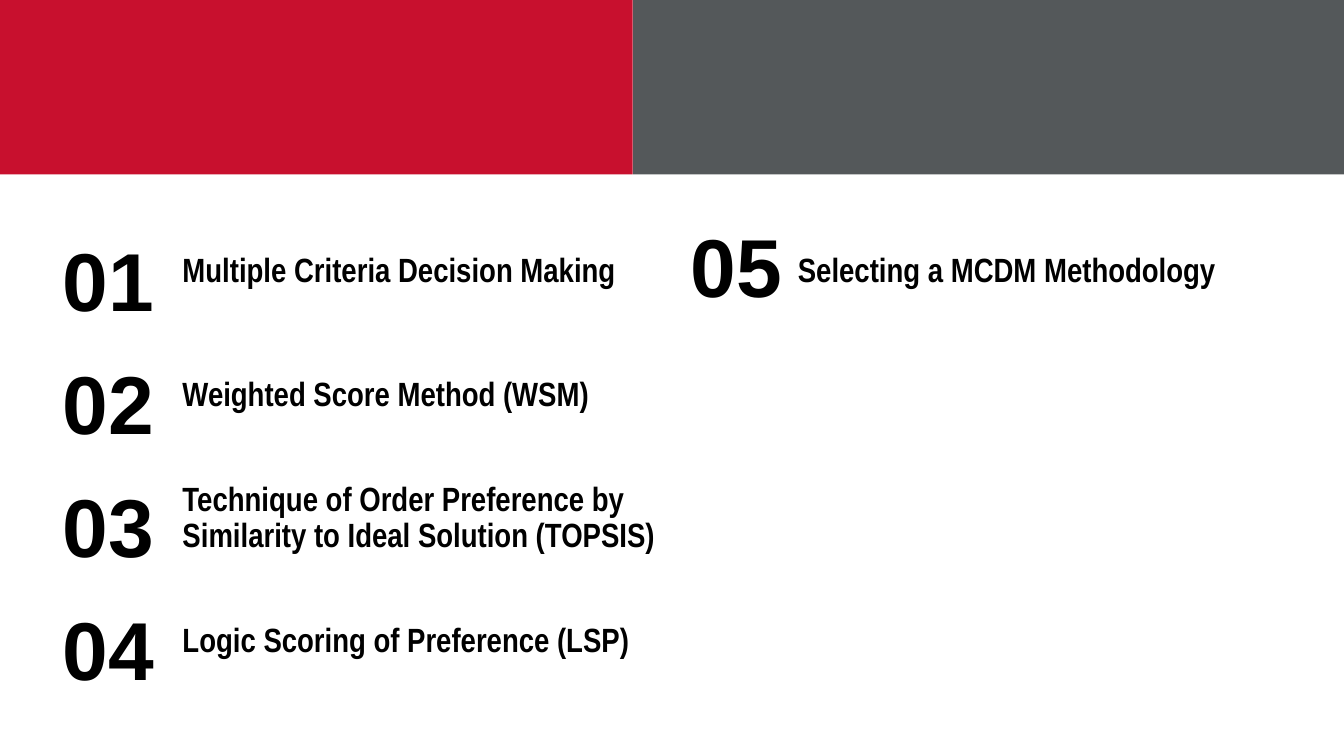
import dataclasses

import pptx
import pptx.dml.color
import pptx.enum.shapes
import pptx.enum.text
import pptx.util

Cm = pptx.util.Cm
Pt = pptx.util.Pt
RGB = pptx.dml.color.RGBColor
ANCHOR = pptx.enum.text.MSO_ANCHOR


@dataclasses.dataclass(frozen=True)
class Theme:
    red: RGB = RGB(0xC8, 0x10, 0x2E)
    grey: RGB = RGB(0x54, 0x58, 0x5A)
    ink: RGB = RGB(0, 0, 0)
    number_font: str = "Arial"
    topic_font: str = "Arial Narrow"
    number_size: Pt = Pt(44)
    topic_size: Pt = Pt(18)
    topic_leading: Pt = Pt(19)


THEME = Theme()
SLIDE_WIDTH, SLIDE_HEIGHT = Cm(25.4), Cm(14.29)
ROW_PITCH = Cm(2.33)
TOPIC_WIDTH, TOPIC_HEIGHT = Cm(9.6), Cm(1.6)
NUMBER_WIDTH, NUMBER_HEIGHT = Cm(3.1), Cm(2.13)

LEFT_TOPICS = [
    "Multiple Criteria Decision Making",
    "Weighted Score Method (WSM)",
    "Technique of Order Preference by Similarity to Ideal Solution (TOPSIS)",
    "Logic Scoring of Preference (LSP)",
]
RIGHT_TOPICS = ["Selecting a MCDM Methodology"]


def apply(target, formats):
    for attribute, value in formats.items():
        setattr(target, attribute, value)


def add_text(slide, box, text, frame_formats, paragraph_formats, font_formats):
    frame = slide.shapes.add_textbox(*box).text_frame
    apply(frame, {"word_wrap": True, **frame_formats})
    line = frame.paragraphs[0]
    line.text = text
    apply(line, paragraph_formats)
    font = line.runs[0].font
    apply(font, {"bold": True, **font_formats})
    font.color.rgb = THEME.ink


def add_header(slide, left, top, width, height):
    red_width = Cm(11.96)
    bands = [
        (left + red_width, width - red_width, THEME.grey),
        (left, red_width, THEME.red),
    ]
    for band_left, band_width, colour in bands:
        band = slide.shapes.add_shape(
            pptx.enum.shapes.MSO_SHAPE.RECTANGLE, band_left, top, band_width, height
        )
        band.shadow.inherit = False
        band.fill.solid()
        band.fill.fore_color.rgb = colour
        band.line.fill.background()


def add_agenda_column(slide, left, top, topics, first, topic_shift, number_drop):
    for row, topic in enumerate(topics):
        row_top = top + row * ROW_PITCH
        add_text(
            slide,
            (left, row_top + number_drop, NUMBER_WIDTH, NUMBER_HEIGHT),
            f"{first + row:02d}",
            {"vertical_anchor": ANCHOR.TOP, "margin_top": Cm(0.27)},
            {},
            {"name": THEME.number_font, "size": THEME.number_size},
        )
        add_text(
            slide,
            (left + topic_shift, row_top, TOPIC_WIDTH, TOPIC_HEIGHT),
            topic,
            {"vertical_anchor": ANCHOR.MIDDLE},
            {"line_spacing": THEME.topic_leading},
            {"name": THEME.topic_font, "size": THEME.topic_size},
        )


def main():
    deck = pptx.Presentation()
    apply(deck, {"slide_width": SLIDE_WIDTH, "slide_height": SLIDE_HEIGHT})
    agenda = deck.slides.add_slide(deck.slide_layouts[6])
    agenda_top = Cm(4.34)
    add_agenda_column(
        agenda, Cm(0.94), agenda_top, LEFT_TOPICS, 1, Cm(2.26), Cm(-0.28)
    )
    add_agenda_column(
        agenda, Cm(12.8), agenda_top, RIGHT_TOPICS, len(LEFT_TOPICS) + 1,
        Cm(2.03), Cm(-0.53),
    )
    add_header(agenda, Cm(0), Cm(0), SLIDE_WIDTH, Cm(3.3))
    deck.save("out.pptx")


if __name__ == "__main__":
    main()
